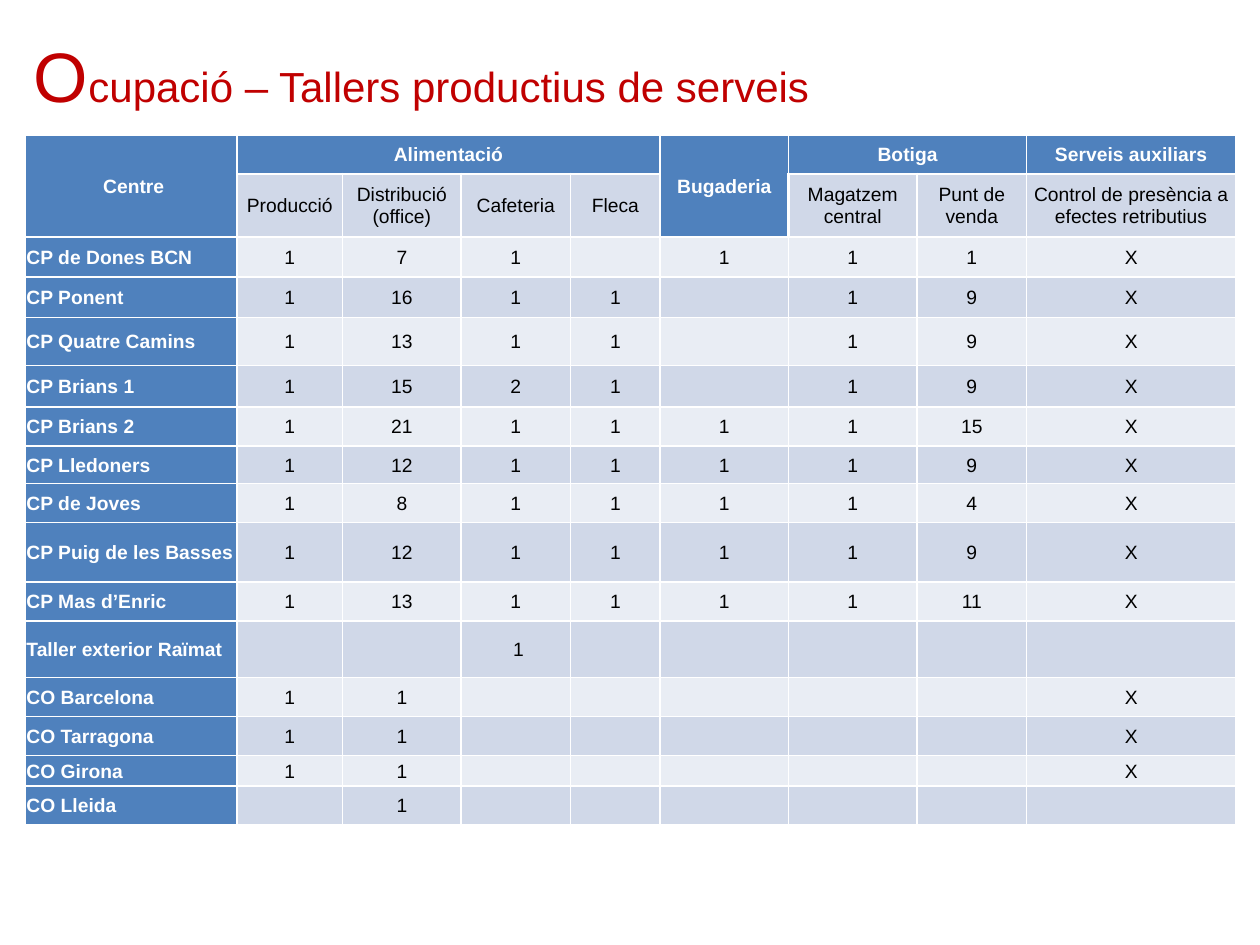
"""Build the slide on service workshops by centre."""
from lxml import etree
from pptx import Presentation
from pptx.dml.color import RGBColor
from pptx.enum.text import MSO_ANCHOR, PP_ALIGN
from pptx.oxml.ns import qn
from pptx.util import Inches, Pt

LEFT, CENTER = PP_ALIGN.LEFT, PP_ALIGN.CENTER
MIDDLE = MSO_ANCHOR.MIDDLE
FONT = "Arial"
RED, BLUE, WHITE, BLACK = "C00000", "4F81BD", "FFFFFF", "000000"
BANDS = ("E9EDF4", "D0D8E8")

TITLE = [("O", 40), ("cupació – Tallers productius de serveis", 24)]
HEADS = [
    [" Centre", "Alimentació", "", "", "", "Bugaderia", "Botiga", "",
     "Serveis auxiliars"],
    ["", "Producció", "Distribució (office)", "Cafeteria", "Fleca", "",
     "Magatzem central", "Punt de venda",
     "Control de presència a efectes retributius"],
]
ROWS = [
    ["CP de Dones BCN", "1", "7", "1", "", "1", "1", "1", "X"],
    ["CP Ponent", "1", "16", "1", "1", "", "1", "9", "X"],
    ["CP Quatre Camins", "1", "13", "1", "1", "", "1", "9", "X"],
    ["CP Brians 1", "1", "15", "2", "1", "", "1", "9", "X"],
    ["CP Brians 2", "1", "21", "1", "1", "1", "1", "15", "X"],
    ["CP Lledoners", "1", "12", "1", "1", "1", "1", "9", "X"],
    ["CP de Joves", "1", "8", "1", "1", "1", "1", "4", "X"],
    ["CP Puig de les Basses", "1", "12", "1", "1", "1", "1", "9", "X"],
    ["CP Mas d’Enric", "1", "13", "1", "1", "1", "1", "11", "X"],
    ["Taller exterior Raïmat", "", "", " 1", "", "", "", "", ""],
    ["CO Barcelona", "1", "1", "", "", "", "", "", "X"],
    ["CO Tarragona", "1", "1", "", "", "", "", "", "X"],
    ["CO Girona", "1", "1", "", "", "", "", "", "X"],
    ["CO Lleida", "", "1", "", "", "", "", "", ""],
]
WIDTHS = [1.68, 0.84, 0.94, 0.87, 0.71, 1.02, 1.02, 0.87, 1.66]
HEIGHTS = [0.31, 0.5, 0.32, 0.32, 0.38, 0.33, 0.31, 0.3,
           0.31, 0.47, 0.31, 0.45, 0.31, 0.31, 0.24, 0.31]
MERGES = [(0, 0, 1, 0), (0, 1, 0, 4), (0, 5, 1, 5), (0, 6, 0, 7)]
TALL = (0, 5)


def color(code):
    return RGBColor.from_string(code)


def write(par, text, size=11, ink=BLACK, bold=False, align=LEFT):
    par.alignment = align
    if not text:
        etree.SubElement(par._p, qn("a:endParaRPr"), sz=str(size * 100))
        return
    run = par.add_run()
    run.text = text
    font = run.font
    font.name, font.size, font.bold = FONT, Pt(size), bold
    font.color.rgb = color(ink)


def is_head(row, col):
    return row < 1 or (row == 1 and col in TALL)


def add_edges(cell, row, col):
    near = {"L": (row, col - 1), "R": (row, col + 1),
            "T": (row - 1, col), "B": (row + cell.span_height, col)}
    props = cell._tc.get_or_add_tcPr()
    for side, spot in near.items():
        width = 1.5 if is_head(row, col) != is_head(*spot) else 1
        line = etree.SubElement(props, qn("a:ln" + side), w=str(Pt(width)))
        fill = etree.SubElement(line, qn("a:solidFill"))
        etree.SubElement(fill, qn("a:srgbClr"), val=WHITE)


def add_title(slide):
    box = slide.shapes.add_textbox(
        Inches(0), Inches(-0.03), Inches(10), Inches(1.25))
    frame = box.text_frame
    frame.word_wrap = True
    frame.vertical_anchor = MIDDLE
    frame.margin_left = Inches(0.27)
    for text, size in TITLE:
        write(frame.paragraphs[0], text, size=size, ink=RED)


def add_grid(slide):
    data = HEADS + ROWS
    table = slide.shapes.add_table(
        len(data), len(WIDTHS), Inches(0.2), Inches(1.07),
        Inches(sum(WIDTHS)), Inches(sum(HEIGHTS))).table
    table.first_row = table.horz_banding = False
    for col, width in zip(table.columns, WIDTHS):
        col.width = Inches(width)
    for row, height in zip(table.rows, HEIGHTS):
        row.height = Inches(height)
    for top, left, low, right in MERGES:
        table.cell(top, left).merge(table.cell(low, right))
    for r, line in enumerate(data):
        for c, text in enumerate(line):
            cell = table.cell(r, c)
            dark = c == 0 or is_head(r, c)
            add_edges(cell, r, c)
            cell.fill.solid()
            cell.fill.fore_color.rgb = color(BLUE if dark else BANDS[r % 2])
            cell.vertical_anchor = MIDDLE
            cell.margin_left = cell.margin_right = Inches(0.01)
            cell.margin_top, cell.margin_bottom = Inches(0.01), 0
            write(cell.text_frame.paragraphs[0], text, bold=dark,
                  ink=WHITE if dark else BLACK,
                  align=LEFT if c == 0 and r >= len(HEADS) else CENTER)


def main():
    deck = Presentation()
    deck.slide_width, deck.slide_height = Inches(10), Inches(7.5)
    slide = deck.slides.add_slide(deck.slide_layouts[6])
    add_grid(slide)
    add_title(slide)
    deck.save("out.pptx")


if __name__ == "__main__":
    main()
